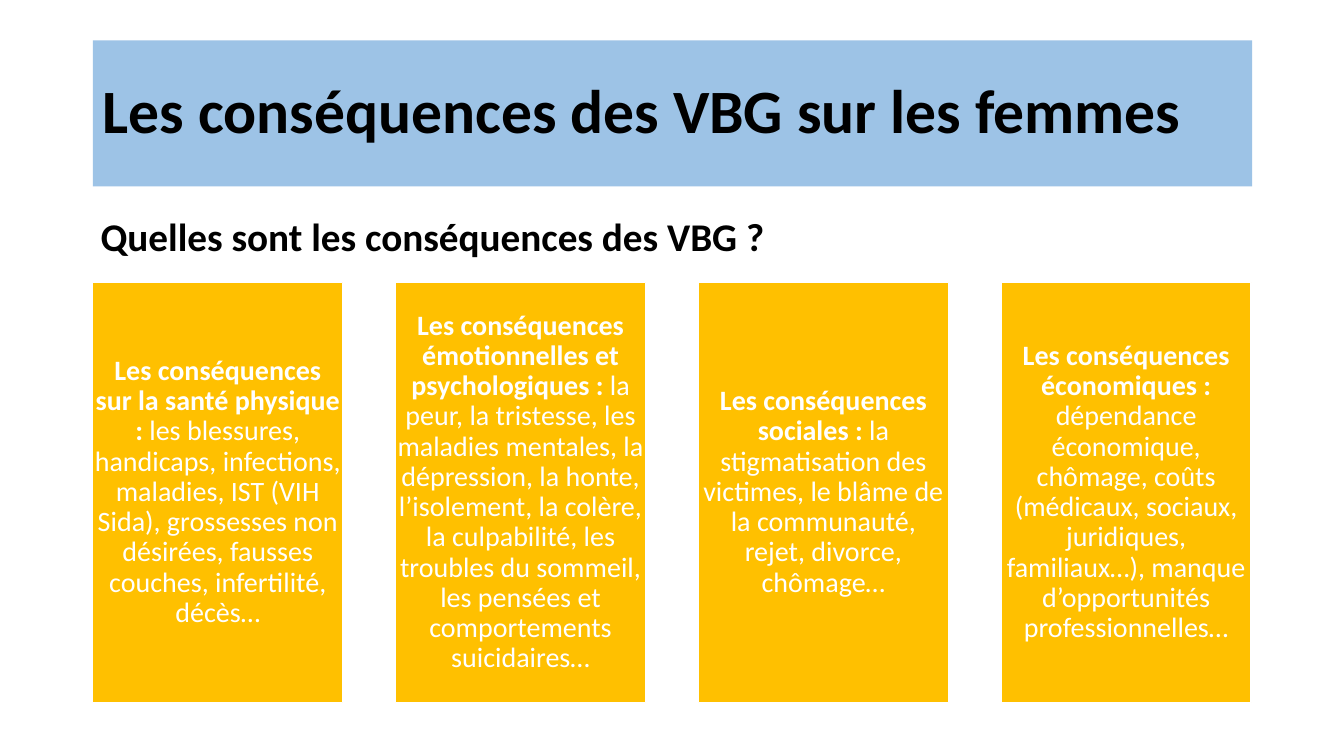
from pptx import Presentation
from pptx.dml.color import RGBColor
from pptx.enum.shapes import MSO_SHAPE
from pptx.enum.text import MSO_ANCHOR, MSO_AUTO_SIZE, PP_ALIGN
from pptx.util import Inches, Pt

TITLE = "Les conséquences des VBG sur les femmes"
QUERY = "Quelles sont les conséquences des VBG ?"
CARDS = [
    ("Les conséquences sur la santé physique : ",
     "les blessures, handicaps, infections, maladies, IST (VIH Sida), "
     "grossesses non désirées, fausses couches, infertilité, décès…"),
    ("Les conséquences émotionnelles et psychologiques : ",
     "la peur, la tristesse, les maladies mentales, la dépression, la honte, "
     "l’isolement, la colère, la culpabilité, les troubles du sommeil, "
     "les pensées et comportements suicidaires…"),
    ("Les conséquences sociales : ",
     "la stigmatisation des victimes, le blâme de la communauté, rejet, "
     "divorce, chômage…"),
    ("Les conséquences économiques : ",
     "dépendance économique, chômage, coûts (médicaux, sociaux, juridiques, "
     "familiaux…), manque d’opportunités professionnelles…"),
]
COLORS = {"band": "9DC3E6", "card": "FFC000", "white": "FFFFFF", "black": "000000"}
LEFT, RIGHT = 0.92, 12.41
TOP, WIDTH, HEIGHT = 2.8, 2.48, 4.17
INSET = 0.01


def rgb(name):
    return RGBColor.from_string(COLORS[name])


def paint(shape, name):
    shape.fill.solid()
    shape.fill.fore_color.rgb = rgb(name)


def place(shape, left, top, width, height):
    shape.left, shape.top = Inches(left), Inches(top)
    shape.width, shape.height = Inches(width), Inches(height)


def style(para, size, color, align):
    para.alignment = align
    para.line_spacing = 0.9
    para.space_before = Pt(0)
    font = para.font
    font.name, font.size = "Calibri", Pt(size)
    font.color.rgb = rgb(color)


def add_card(slide, left, head, body):
    card = slide.shapes.add_shape(
        MSO_SHAPE.RECTANGLE, Inches(left), Inches(TOP), Inches(WIDTH), Inches(HEIGHT))
    card.shadow.inherit = False
    paint(card, "card")
    card.line.color.rgb = rgb("white")
    card.line.width = Pt(1)
    frame = card.text_frame
    frame.word_wrap = True
    frame.vertical_anchor = MSO_ANCHOR.MIDDLE
    frame.margin_left = frame.margin_right = Inches(INSET)
    frame.margin_top = frame.margin_bottom = Inches(INSET)
    para = frame.paragraphs[0]
    for text, bold in ((head, True), (body, False)):
        run = para.add_run()
        run.text = text
        run.font.bold = bold
    style(para, 20, "white", PP_ALIGN.CENTER)


def main():
    deck = Presentation()
    deck.slide_width, deck.slide_height = Inches(13.33), Inches(7.5)
    slide = deck.slides.add_slide(deck.slide_layouts[5])

    title = slide.shapes.title
    place(title, LEFT, 0.4, 11.5, 1.45)
    paint(title, "band")
    title.text_frame.text = TITLE
    title.text_frame.auto_size = MSO_AUTO_SIZE.NONE
    title.text_frame.vertical_anchor = MSO_ANCHOR.MIDDLE

    query = slide.shapes.add_textbox(
        Inches(0.9), Inches(2.11), Inches(11.5), Inches(4.76))
    paint(query, "white")
    query.text_frame.word_wrap = True
    query.text_frame.text = QUERY

    for box, size, align in ((title, 44, PP_ALIGN.LEFT), (query, 28, PP_ALIGN.JUSTIFY)):
        para = box.text_frame.paragraphs[0]
        style(para, size, "black", align)
        para.font.bold = True

    step = (RIGHT - LEFT - WIDTH) / (len(CARDS) - 1)
    for i, (head, body) in enumerate(CARDS):
        add_card(slide, LEFT + i * step, head, body)

    deck.save("out.pptx")


if __name__ == "__main__":
    main()
